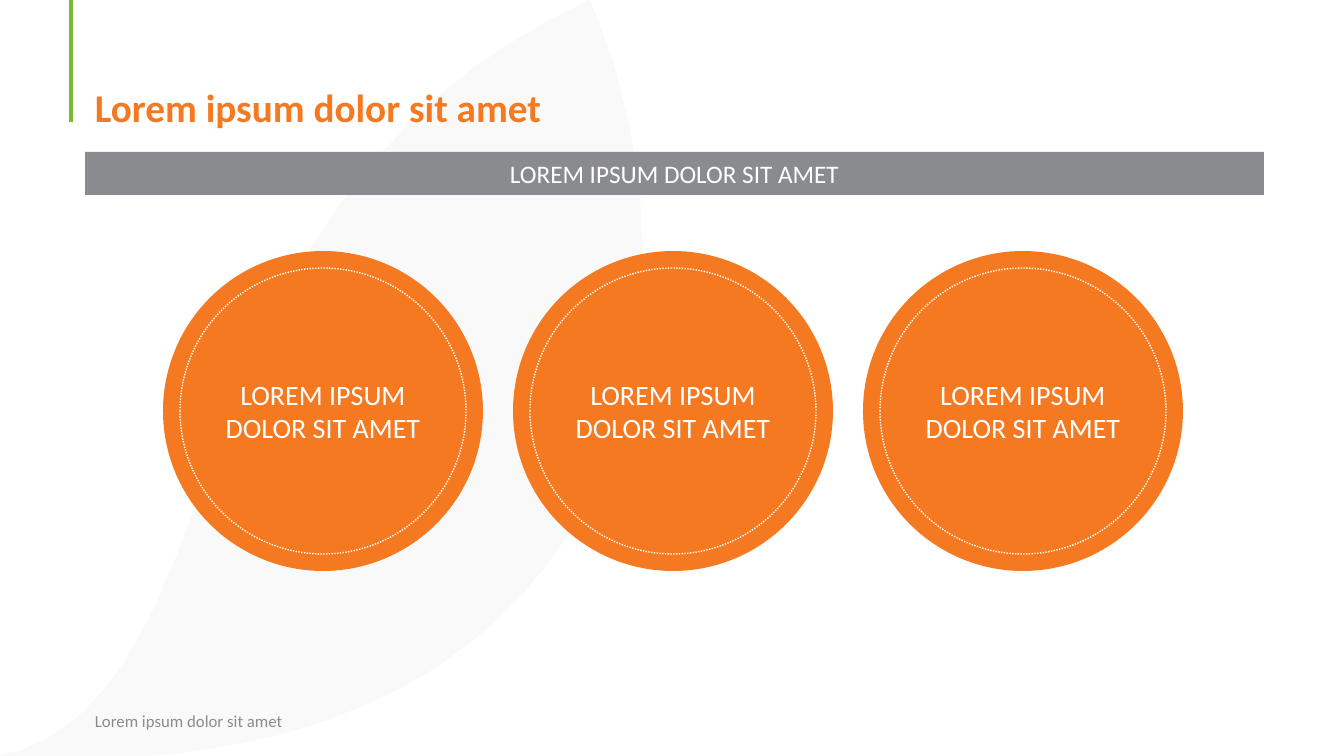
from pptx import Presentation
from pptx.dml.color import RGBColor
from pptx.enum.dml import MSO_LINE
from pptx.enum.shapes import MSO_SHAPE as Preset
from pptx.enum.text import MSO_ANCHOR as Anchor, PP_ALIGN as Align
from pptx.util import Pt

TITLE = "Lorem ipsum dolor sit amet"
FOOTER = "Lorem ipsum dolor sit amet"
BANNER = "LOREM IPSUM DOLOR SIT AMET"
CIRCLES = [
    ("LOREM IPSUM DOLOR SIT AMET", "F47920"),
    ("LOREM IPSUM DOLOR SIT AMET", "F47920"),
    ("LOREM IPSUM DOLOR SIT AMET", "F57920"),
]
LEAF_CURVES = [
    [(590, 0), (720, 300), (640, 800), (0, 756)],
    [(0, 756), (250, 700), (150, 200), (590, 0)],
]
ORANGE, GREEN, GREY, WHITE, PALE = "F47920", "78BB32", "898B8E", "FFFFFF", "F9F9FA"
FONT = "Calibri"
EMU_PER_PX = 914400 / 100.8

CIRCLE_LEFT, CIRCLE_TOP, CIRCLE_SIZE, CIRCLE_PITCH = 163, 251, 320, 350
RING_INSET = 17
CURVE_STEPS = 30


def px(length):
    return round(length * EMU_PER_PX)


def color(value):
    return RGBColor.from_string(value)


def write(shape, text, size, text_color, align=Align.LEFT, anchor=Anchor.MIDDLE, bold=False):
    frame = shape.text_frame
    frame.word_wrap = True
    frame.vertical_anchor = anchor
    frame.text = text
    paragraph = frame.paragraphs[0]
    paragraph.alignment = align
    font = paragraph.runs[0].font
    font.name, font.size, font.bold = FONT, Pt(size), bold
    font.color.rgb = color(text_color)
    return frame


def paint(shape, fill):
    shape.shadow.inherit = False
    shape.fill.solid()
    shape.fill.fore_color.rgb = color(fill)
    shape.line.fill.background()


def add_filled(slide, preset, box, fill):
    shape = slide.shapes.add_shape(preset, *map(px, box))
    paint(shape, fill)
    return shape


def add_ring(slide, box):
    ring = slide.shapes.add_shape(Preset.OVAL, *map(px, box))
    ring.shadow.inherit = False
    ring.fill.background()
    ring.line.color.rgb = color(WHITE)
    ring.line.width = Pt(1)
    ring.line.dash_style = MSO_LINE.ROUND_DOT


def curve_point(curve, t):
    weights = ((1 - t) ** 3, 3 * t * (1 - t) ** 2, 3 * t ** 2 * (1 - t), t ** 3)
    return tuple(sum(w * point[axis] for w, point in zip(weights, curve)) for axis in (0, 1))


def add_leaf(slide):
    points = [curve_point(curve, step / CURVE_STEPS)
              for curve in LEAF_CURVES for step in range(CURVE_STEPS)]
    builder = slide.shapes.build_freeform(*points[0], scale=EMU_PER_PX)
    builder.add_line_segments(points[1:], close=True)
    paint(builder.convert_to_shape(), PALE)


def main():
    presentation = Presentation()
    presentation.slide_width, presentation.slide_height = px(1344), px(756)
    slide = presentation.slides.add_slide(presentation.slide_layouts[6])

    add_filled(slide, Preset.RECTANGLE, (69, 0, 4, 122), GREEN)
    add_leaf(slide)

    title = slide.shapes.add_textbox(*map(px, (85, 41, 1208, 95)))
    title_frame = write(title, TITLE, 28, ORANGE, anchor=Anchor.BOTTOM, bold=True)
    title_frame.paragraphs[0].line_spacing = 0.9
    footer = slide.shapes.add_textbox(*map(px, (85, 701, 1067, 40)))
    write(footer, FOOTER, 12, GREY)

    ring_size = CIRCLE_SIZE - 2 * RING_INSET
    for index, (text, fill) in enumerate(CIRCLES):
        left = CIRCLE_LEFT + index * CIRCLE_PITCH
        circle = add_filled(slide, Preset.OVAL, (left, CIRCLE_TOP, CIRCLE_SIZE, CIRCLE_SIZE), fill)
        frame = write(circle, text, 20, WHITE, Align.CENTER)
        frame.margin_left = frame.margin_right = frame.margin_top = frame.margin_bottom = 0
        add_ring(slide, (left + RING_INSET, CIRCLE_TOP + RING_INSET, ring_size, ring_size))

    banner = add_filled(slide, Preset.RECTANGLE, (85, 152, 1179, 43), GREY)
    write(banner, BANNER, 18, WHITE, Align.CENTER)

    presentation.save("out.pptx")


if __name__ == "__main__":
    main()
